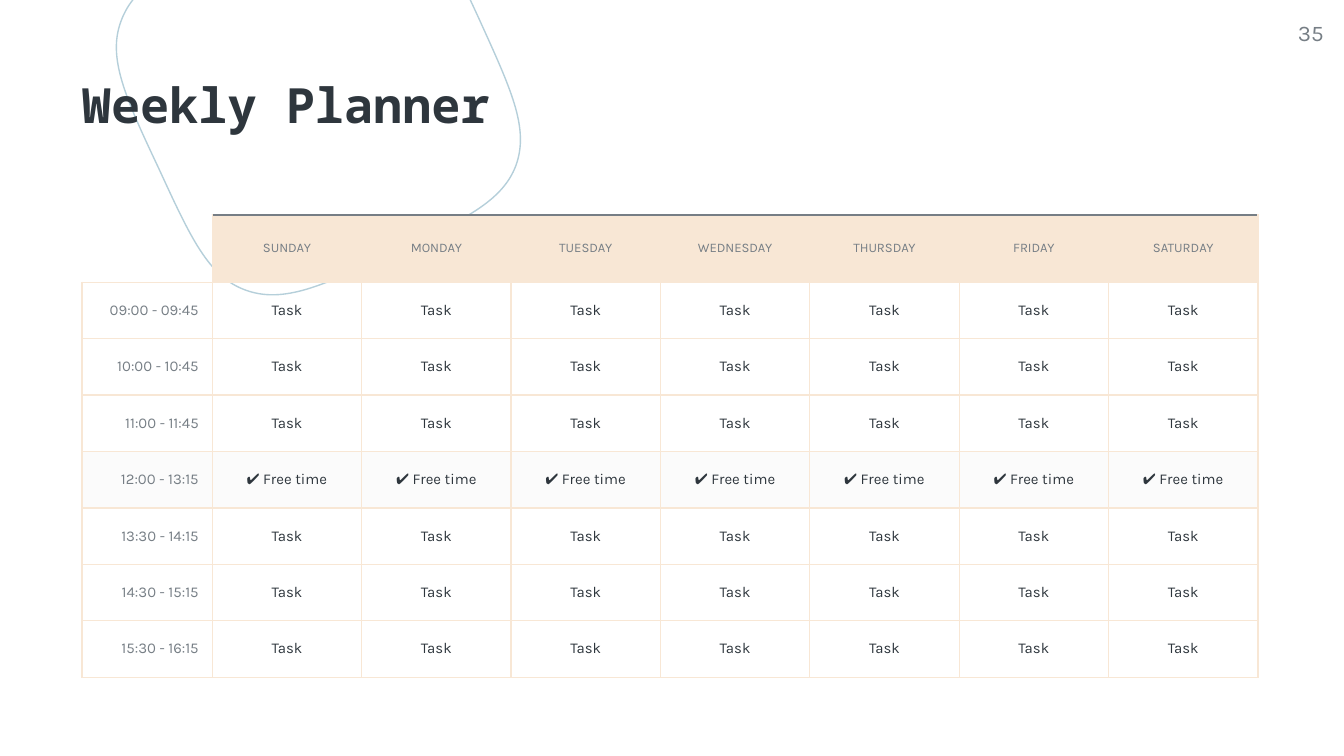
from dataclasses import dataclass

from lxml import etree
from pptx import Presentation
from pptx.dml.color import RGBColor
from pptx.enum.text import MSO_ANCHOR, PP_ALIGN
from pptx.oxml.ns import qn
from pptx.util import Inches, Pt

LEFT, CENTER, RIGHT = PP_ALIGN.LEFT, PP_ALIGN.CENTER, PP_ALIGN.RIGHT
TOP, MIDDLE = MSO_ANCHOR.TOP, MSO_ANCHOR.MIDDLE

DARK, GREY, BEIGE, PALE, BLUE = "2E363D", "767E85", "F8E7D5", "FBFBFB", "B5CFDA"
BORDER_SIDES = ("lnL", "lnR", "lnT", "lnB")
LINE_WIDTH = Pt(0.75)

DAYS = ("SUNDAY", "MONDAY", "TUESDAY", "WEDNESDAY", "THURSDAY", "FRIDAY", "SATURDAY")
TIMES = ("09:00 - 09:45", "10:00 - 10:45", "11:00 - 11:45", "12:00 - 13:15",
         "13:30 - 14:15", "14:30 - 15:15", "15:30 - 16:15")
BREAK_TIME = "12:00 - 13:15"

# Blob outline in inches: a start point, then two controls and an end per curve
BLOB_START = (2.92, 1.88)
BLOB_CURVES = (
    ((3.45, 1.64), (3.74, 1.5), (3.84, 1.23)),
    ((3.94, 0.95), (3.8, 0.66), (3.56, 0.13)),
    ((3.32, -0.39), (3.18, -0.68), (2.9, -0.78)),
    ((2.63, -0.88), (2.33, -0.74), (1.81, -0.5)),
    ((1.29, -0.26), (1, -0.12), (0.9, 0.16)),
    ((0.8, 0.43), (0.93, 0.72), (1.18, 1.25)),
    ((1.42, 1.77), (1.55, 2.06), (1.83, 2.16)),
    ((2.11, 2.26), (2.4, 2.13), BLOB_START),
)


@dataclass
class TextStyle:
    size: float
    color: str
    align: PP_ALIGN
    font: str = "Karla"
    bold: bool = False


TITLE = TextStyle(26, DARK, LEFT, "Noto Sans Mono", True)
PAGE_NUMBER = TextStyle(12, GREY, RIGHT)
CORNER = TextStyle(18, GREY, LEFT, "Arial")
DAY = TextStyle(7, GREY, CENTER)
TIME = TextStyle(8, GREY, RIGHT)
TASK = TextStyle(8, DARK, CENTER)


def rgb(color: str) -> RGBColor:
    return RGBColor.from_string(color)


def write_text(text_frame, text: str, style: TextStyle) -> None:
    paragraph = text_frame.paragraphs[0]
    paragraph.alignment = style.align
    if not text:
        # An empty cell takes its height from the end-of-paragraph font
        end = etree.SubElement(paragraph._p, qn("a:endParaRPr"), sz=str(style.size * 100))
        etree.SubElement(end, qn("a:latin"), typeface=style.font)
        return
    run = paragraph.add_run()
    run.text = text
    run.font.name = style.font
    run.font.size = Pt(style.size)
    run.font.bold = style.bold
    run.font.color.rgb = rgb(style.color)


def add_label(slide, left: float, top: float, width: float, height: float,
              text: str, style: TextStyle) -> None:
    box = slide.shapes.add_textbox(Inches(left), Inches(top), Inches(width), Inches(height))
    frame = box.text_frame
    frame.word_wrap = True
    frame.vertical_anchor = TOP
    frame.margin_left = frame.margin_right = frame.margin_top = frame.margin_bottom = 0
    write_text(frame, text, style)


def add_blob(slide) -> None:
    points = [(Inches(x), Inches(y)) for curve in BLOB_CURVES for x, y in curve]
    builder = slide.shapes.build_freeform(*(Inches(value) for value in BLOB_START))
    builder.add_line_segments(points, close=True)
    shape = builder.convert_to_shape()
    shape.shadow.inherit = False
    shape.fill.background()
    shape.line.color.rgb = rgb(BLUE)
    shape.line.width = LINE_WIDTH

    # Turn every three straight segments into one Bézier curve
    segments = list(shape.element.iter(qn("a:lnTo")))
    for start in range(0, len(segments), 3):
        curve = etree.Element(qn("a:cubicBezTo"))
        segments[start].addprevious(curve)
        for segment in segments[start:start + 3]:
            curve.append(segment[0])
            segment.getparent().remove(segment)


def set_border(cell, side: str, color: str | None) -> None:
    properties = cell._tc.get_or_add_tcPr()
    line = etree.SubElement(properties, qn(f"a:{side}"), w=str(LINE_WIDTH))
    if color is None:
        etree.SubElement(line, qn("a:noFill"))
    else:
        fill = etree.SubElement(line, qn("a:solidFill"))
        etree.SubElement(fill, qn("a:srgbClr"), val=color)


def format_cell(cell, text: str, style: TextStyle, fill: str | None = None,
                borders: dict[str, str | None] | None = None) -> None:
    cell.vertical_anchor = MIDDLE
    cell.margin_left = cell.margin_right = Inches(0.1)
    cell.margin_top = cell.margin_bottom = Inches(0.1)
    for side in BORDER_SIDES:
        set_border(cell, side, (borders or {}).get(side, BEIGE))
    if fill:
        cell.fill.solid()
        cell.fill.fore_color.rgb = rgb(fill)
    else:
        cell.fill.background()
    write_text(cell.text_frame, text, style)


def add_planner(slide) -> None:
    table_width, time_width, header_height, row_height = 8.75, 0.97, 0.33, 0.42
    day_width = (table_width - time_width) / len(DAYS)
    frame = slide.shapes.add_table(
        len(TIMES) + 1, len(DAYS) + 1, Inches(0.61), Inches(1.6),
        Inches(table_width), Inches(header_height + row_height * len(TIMES)))
    table = frame.table
    table.first_row = table.horz_banding = False
    for index, column in enumerate(table.columns):
        column.width = Inches(day_width if index else time_width)
    for index, row in enumerate(table.rows):
        row.height = Inches(row_height if index else header_height)

    # Header row with an open corner
    format_cell(table.cell(0, 0), "", CORNER, borders={"lnL": None, "lnT": None})
    for column, day in enumerate(DAYS, 1):
        borders = {"lnL": BEIGE if column == 1 else None,
                   "lnR": BEIGE if column == len(DAYS) else None, "lnT": GREY}
        format_cell(table.cell(0, column), day, DAY, BEIGE, borders)

    # Time slots
    for row, time in enumerate(TIMES, 1):
        is_break = time == BREAK_TIME
        fill = PALE if is_break else None
        format_cell(table.cell(row, 0), time, TIME, fill)
        for column in range(1, len(DAYS) + 1):
            format_cell(table.cell(row, column), "✔ Free time" if is_break else "Task",
                        TASK, fill)


def main() -> None:
    presentation = Presentation()
    presentation.slide_width = Inches(10)
    presentation.slide_height = Inches(10 * 9 / 16)
    slide = presentation.slides.add_slide(presentation.slide_layouts[6])

    add_blob(slide)
    add_label(slide, 0.61, 0.56, 3.09, 0.5, "Weekly Planner", TITLE)
    add_label(slide, 9.25, 0.14, 0.6, 0.43, "35", PAGE_NUMBER)
    add_planner(slide)
    presentation.save("out.pptx")


if __name__ == "__main__":
    main()
